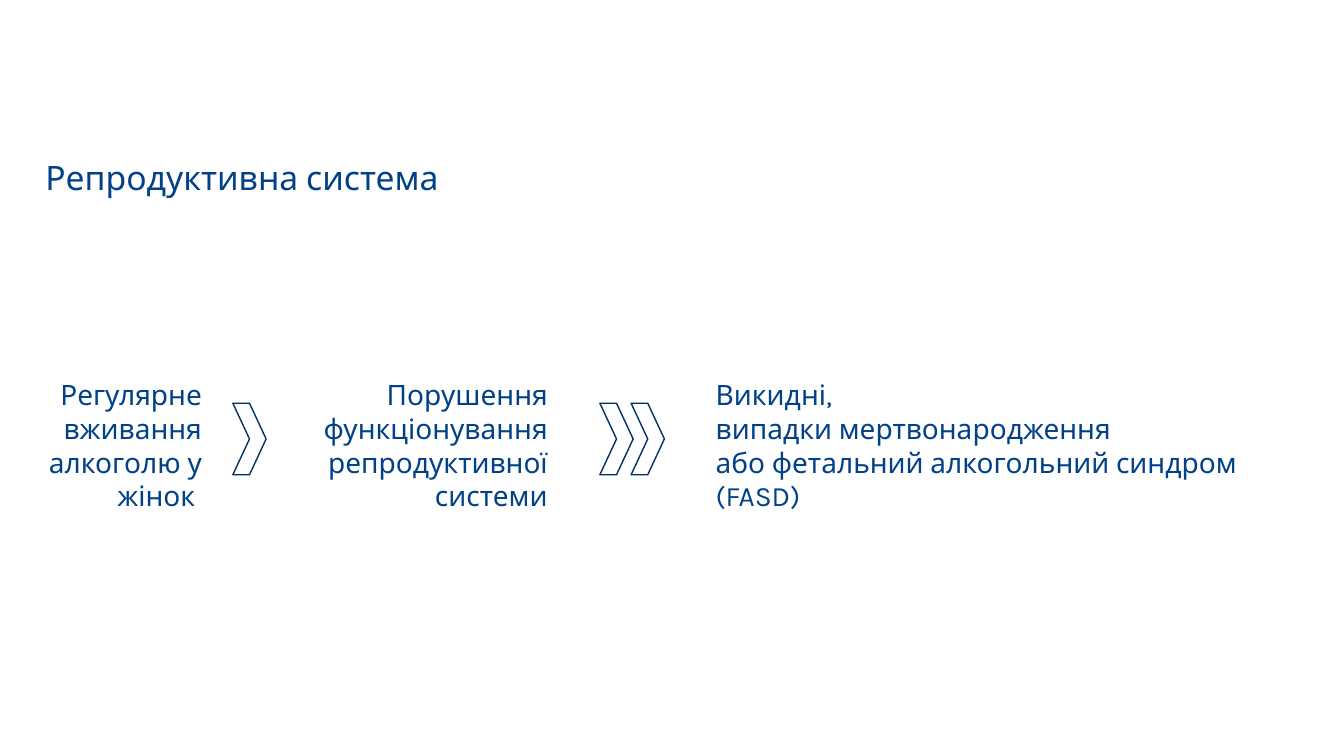
import pptx
import pptx.dml.color
import pptx.enum.shapes
import pptx.enum.text
import pptx.util

Inches = pptx.util.Inches
Align = pptx.enum.text.PP_ALIGN
Anchor = pptx.enum.text.MSO_ANCHOR
AutoSize = pptx.enum.text.MSO_AUTO_SIZE

BLUE = pptx.dml.color.RGBColor(0x00, 0x41, 0x88)
NAVY = pptx.dml.color.RGBColor(0x00, 0x30, 0x65)
FONT = "Karla"
TITLE_SIZE = 24
BODY_SIZE = 20
STEP_TOP = 3.7
CHEVRON_TOP, CHEVRON_WIDTH, CHEVRON_HEIGHT = 4, 0.33, 0.71


class FlowSlide:
    def __init__(self, deck):
        self.page = deck.slides.add_slide(deck.slide_layouts[5])

    def fill_text(self, frame, text, size, align):
        frame.word_wrap = True
        frame.text = text
        for para in frame.paragraphs:
            para.alignment = align
            for span in para.runs:
                span.font.name = FONT
                span.font.size = pptx.util.Pt(size)
                span.font.color.rgb = BLUE

    def title(self, text, left, top, width, height):
        box = self.page.shapes.title
        box.left, box.top = Inches(left), Inches(top)
        box.width, box.height = Inches(width), Inches(height)
        self.fill_text(box.text_frame, text, TITLE_SIZE, Align.LEFT)
        box.text_frame.auto_size = AutoSize.NONE
        box.text_frame.vertical_anchor = Anchor.MIDDLE
        box.text_frame.paragraphs[0].line_spacing = 0.9

    def step(self, text, left, width, height, align):
        box = self.page.shapes.add_textbox(
            Inches(left), Inches(STEP_TOP), Inches(width), Inches(height))
        self.fill_text(box.text_frame, text, BODY_SIZE, align)
        box.text_frame.auto_size = AutoSize.SHAPE_TO_FIT_TEXT

    def chevron(self, left):
        shape = self.page.shapes.add_shape(
            pptx.enum.shapes.MSO_SHAPE.CHEVRON, Inches(left), Inches(CHEVRON_TOP),
            Inches(CHEVRON_WIDTH), Inches(CHEVRON_HEIGHT))
        shape.shadow.inherit = False
        shape.fill.background()
        shape.line.color.rgb = NAVY
        shape.line.width = pptx.util.Pt(1)


def main():
    deck = pptx.Presentation()
    deck.slide_width, deck.slide_height = Inches(13.33), Inches(7.5)
    slide = FlowSlide(deck)
    slide.title("Репродуктивна система", 0.35, 1.58, 12.63, 0.4)
    slide.step("Регулярне вживання алкоголю у жінок ", 0.15, 1.95, 1.45, Align.RIGHT)
    slide.step("Порушення функціонування репродуктивної системи",
               2.85, 2.68, 1.45, Align.RIGHT)
    slide.step("Викидні,\nвипадки мертвонародження\n"
               "або фетальний алкогольний синдром (FASD)", 7, 6.2, 1.11, Align.LEFT)
    for left in (2.31, 5.95, 6.26):
        slide.chevron(left)
    deck.save("out.pptx")


if __name__ == "__main__":
    main()
